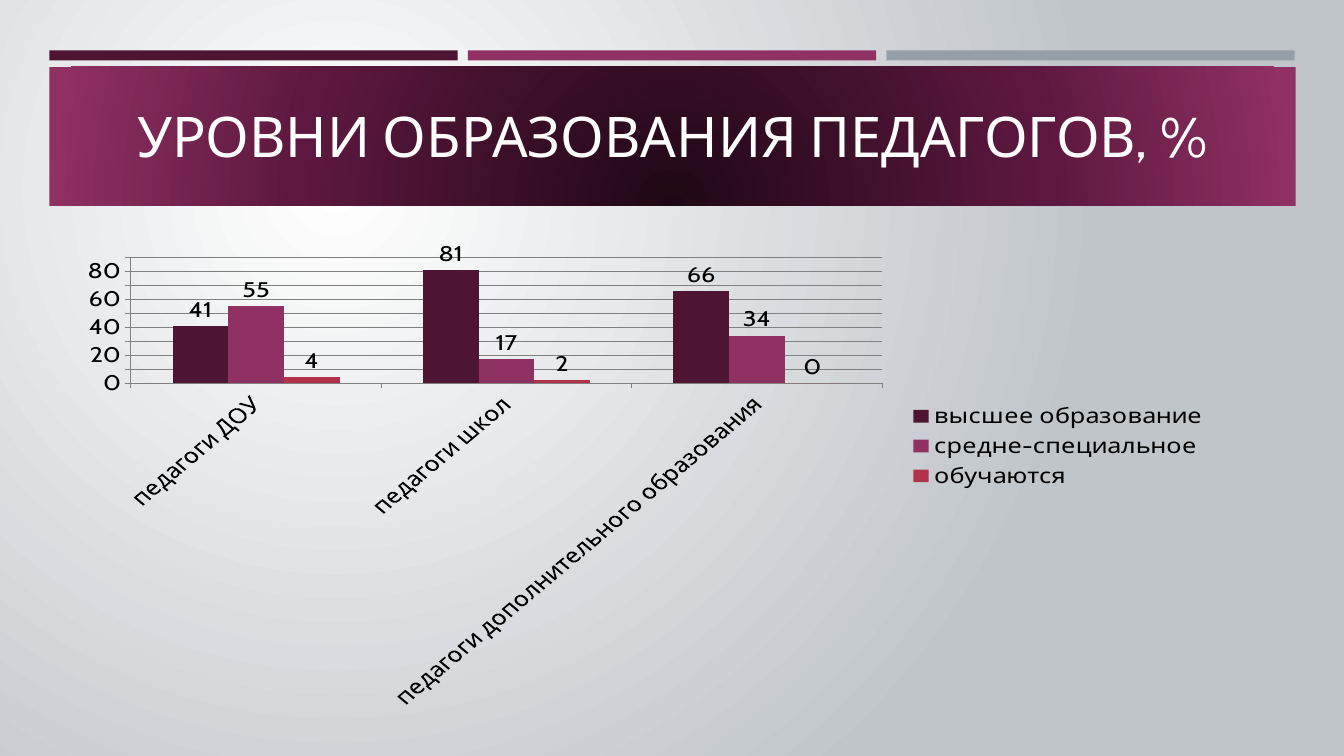
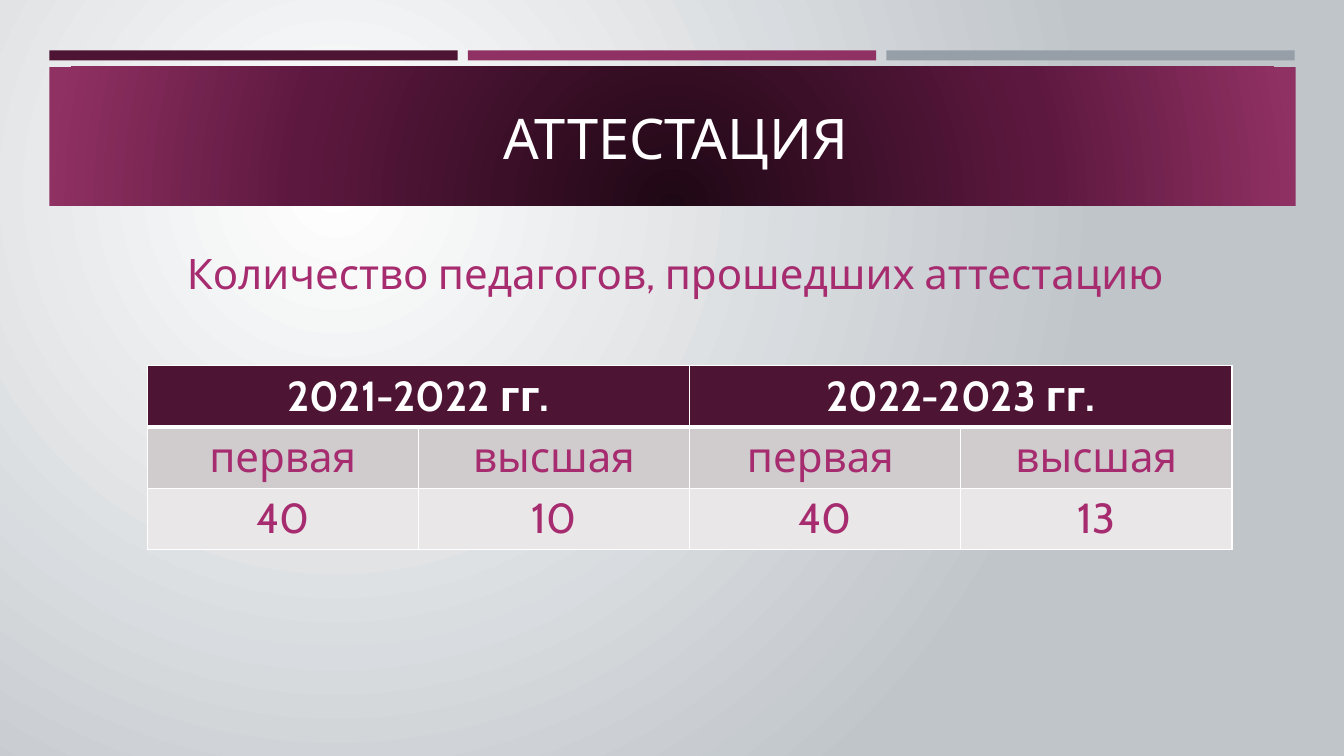
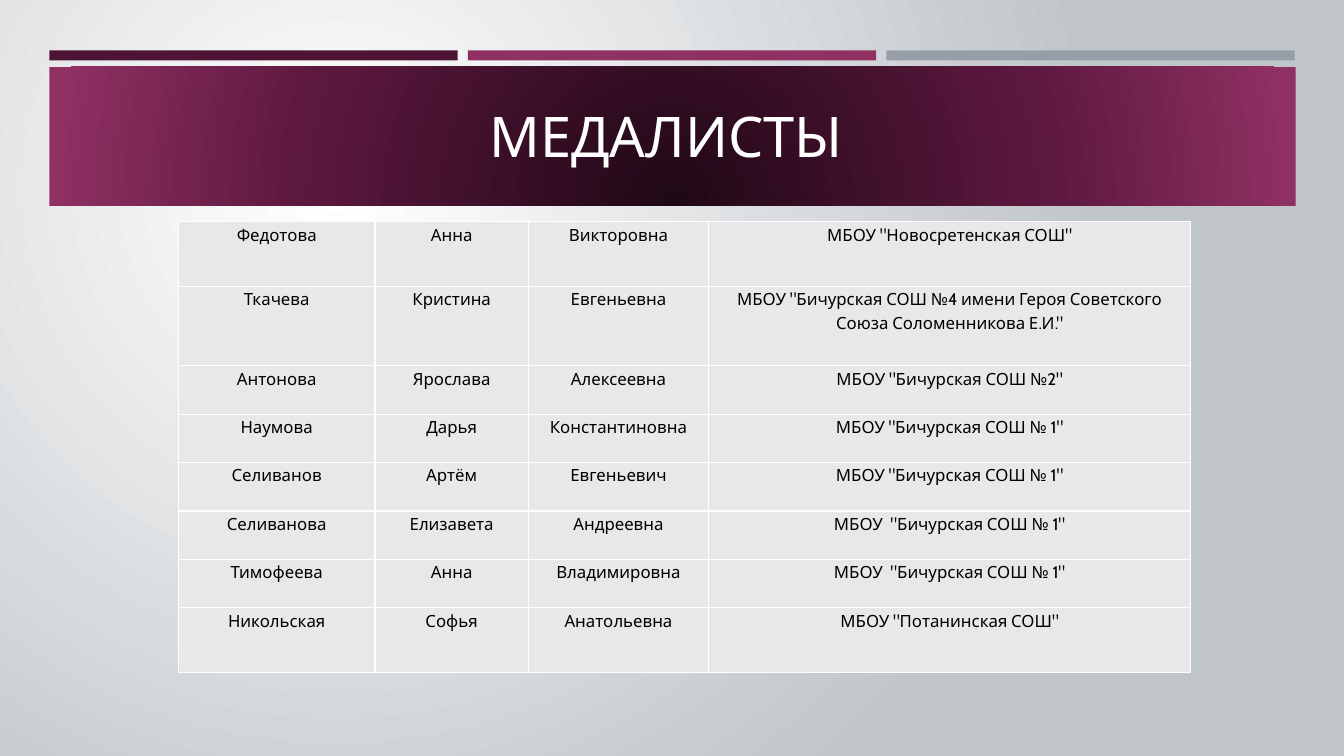
from dataclasses import dataclass

from lxml.etree import SubElement
from pptx import Presentation
from pptx.chart.data import CategoryChartData
from pptx.dml.color import RGBColor
from pptx.enum.chart import XL_CHART_TYPE, XL_LABEL_POSITION, XL_LEGEND_POSITION, XL_TICK_MARK
from pptx.enum.shapes import MSO_SHAPE
from pptx.enum.text import MSO_ANCHOR, PP_ALIGN
from pptx.oxml.ns import qn
from pptx.util import Inches, Pt

# Shared style
FONT = "Cabin"
WHITE = RGBColor(0xFF, 0xFF, 0xFF)
BLACK = RGBColor(0x00, 0x00, 0x00)
PLUM = RGBColor(0x4D, 0x14, 0x34)
BERRY = RGBColor(0x90, 0x31, 0x63)
RED = RGBColor(0xB2, 0x32, 0x4B)
STEEL = RGBColor(0x96, 0x9F, 0xA7)
MIST = RGBColor(0xC0, 0xC5, 0xCA)
MAGENTA = RGBColor(0xA6, 0x2C, 0x6F)
DARK_PLUM = RGBColor(0x1F, 0x08, 0x15)
MID_PLUM = RGBColor(0x5D, 0x18, 0x3F)
CELL_DARK = RGBColor(0xD0, 0xCC, 0xCE)
CELL_LIGHT = RGBColor(0xE9, 0xE7, 0xE8)
AXIS_GRAY = RGBColor(0x80, 0x80, 0x80)

TITLE_ONLY, TITLE_AND_BODY = 5, 1
MARGIN, BAR_WIDTH, BAR_STEP = 0.49, 4.05, 4.15


@dataclass(frozen=True)
class Area:
    left: float
    top: float
    width: float
    height: float

    def lengths(self) -> tuple:
        return tuple(Inches(n) for n in (self.left, self.top, self.width, self.height))


@dataclass(frozen=True)
class CellStyle:
    size: float
    color: RGBColor
    fill: RGBColor
    bold: bool = False
    top_line: float = 1
    bottom_line: float = 1


@dataclass(frozen=True)
class Series:
    name: str
    values: tuple[int, ...]
    color: RGBColor


HEADER = CellStyle(30, WHITE, PLUM, bold=True, bottom_line=3)
CATEGORY = CellStyle(30, MAGENTA, CELL_DARK, top_line=3)
COUNT = CellStyle(30, MAGENTA, CELL_LIGHT)
PERSON = CellStyle(12, BLACK, CELL_LIGHT)

# Slide content
GROUPS = ("педагоги ДОУ", "педагоги школ", "педагоги дополнительного образования")
EDUCATION = (
    Series("высшее образование", (41, 81, 66), PLUM),
    Series("средне-специальное", (55, 17, 34), BERRY),
    Series("обучаются", (4, 2, 0), RED),
)
ATTESTATION = (
    (HEADER, ("2021-2022 гг.", "", "2022-2023 гг.", "")),
    (CATEGORY, ("первая", "высшая", "первая ", "высшая")),
    (COUNT, ("40", "10", "40", "13")),
)
MEDALISTS = (
    ("Федотова", "Анна", "Викторовна", 'МБОУ "Новосретенская СОШ"'),
    ("Ткачева", "Кристина", "Евгеньевна",
     'МБОУ "Бичурская СОШ №4 имени Героя Советского Союза Соломенникова Е.И."'),
    ("Антонова", "Ярослава", "Алексеевна", 'МБОУ "Бичурская СОШ №2"'),
    ("Наумова", "Дарья", "Константиновна", 'МБОУ "Бичурская СОШ № 1"'),
    ("Селиванов", "Артём", "Евгеньевич", 'МБОУ "Бичурская СОШ № 1"'),
    ("Селиванова", "Елизавета", "Андреевна", 'МБОУ  "Бичурская СОШ № 1"'),
    ("Тимофеева", "Анна", "Владимировна", 'МБОУ  "Бичурская СОШ № 1"'),
    ("Никольская", "Софья", "Анатольевна", 'МБОУ "Потанинская СОШ"'),
)


def add_text(para, text: str, size: float, color: RGBColor, bold: bool = False) -> None:
    para.alignment = PP_ALIGN.CENTER
    span = para.add_run()
    span.text = text
    span.font.name = FONT
    span.font.size = Pt(size)
    span.font.bold = bold
    span.font.color.rgb = color


def set_radial_fill(fill, owner, stops: tuple, focus: tuple) -> None:
    """Give a fill a circular gradient; stops and focus are in percent."""
    fill.gradient()
    gradient = owner.find(".//" + qn("a:gradFill"))
    for child in list(gradient):
        gradient.remove(child)
    stop_list = SubElement(gradient, qn("a:gsLst"))
    for position, color in stops:
        stop = SubElement(stop_list, qn("a:gs"), pos=str(position * 1000))
        SubElement(stop, qn("a:srgbClr"), val=str(color))
    shade = SubElement(gradient, qn("a:path"))
    shade.set("path", "circle")
    focus_box = SubElement(shade, qn("a:fillToRect"))
    for side, percent in zip("ltrb", focus):
        focus_box.set(side, str(percent * 1000))


def add_rectangle(page, area: Area, color: RGBColor):
    box = page.shapes.add_shape(MSO_SHAPE.RECTANGLE, *area.lengths())
    box.shadow.inherit = False
    box.line.fill.background()
    box.fill.solid()
    box.fill.fore_color.rgb = color
    return box


def decorate_master(master, page) -> None:
    """Draw the background, bars and title band, then move them to the master."""
    set_radial_fill(master.background.fill, master.element,
                    ((0, WHITE), (100, MIST)), (50, 50, 100, 100))
    parts = [
        add_rectangle(page, Area(MARGIN + i * BAR_STEP, 0.5, BAR_WIDTH, 0.1), color)
        for i, color in enumerate((PLUM, BERRY, STEEL))
    ]
    band = add_rectangle(page, Area(MARGIN, 0.66, 12.36, 1.38), PLUM)
    set_radial_fill(band.fill, band.element,
                    ((0, DARK_PLUM), (60, MID_PLUM), (100, BERRY)), (50, 130, 50, -30))
    tree = master.element.cSld.spTree
    for i, part in enumerate([*parts, band]):
        part.element.nvSpPr.cNvPr.set("id", str(100 + i))
        tree.insert(2 + i, part.element)


def place(box, area: Area) -> None:
    box.left, box.top, box.width, box.height = area.lengths()
    box.text_frame.word_wrap = True


def add_page(deck, layout: int, title: str, left: float = 0.64, top: float = 0.8):
    page = deck.slides.add_slide(deck.slide_layouts[layout])
    box = page.shapes.title
    place(box, Area(left, top, 12.06, 1.08))
    box.text_frame.vertical_anchor = MSO_ANCHOR.MIDDLE
    add_text(box.text_frame.paragraphs[0], title, 40, WHITE)
    return page


def style_cell(cell, text: str, style: CellStyle) -> None:
    cell.fill.solid()
    cell.fill.fore_color.rgb = style.fill
    widths = {"L": 1, "R": 1, "T": style.top_line, "B": style.bottom_line}
    properties = cell._tc.get_or_add_tcPr()
    for i, (side, width) in enumerate(widths.items()):
        line = SubElement(properties, qn("a:ln" + side), w=str(Pt(width)))
        SubElement(SubElement(line, qn("a:solidFill")), qn("a:srgbClr"), val=str(WHITE))
        properties.insert(i, line)
    if text:
        add_text(cell.text_frame.paragraphs[0], text, style.size, style.color, style.bold)


def add_grid(page, left: float, top: float, widths: tuple, heights: tuple, rows: tuple):
    area = Area(left, top, sum(widths), sum(heights))
    table = page.shapes.add_table(len(heights), len(widths), *area.lengths()).table
    table.horz_banding = False
    for column, width in zip(table.columns, widths):
        column.width = Inches(width)
    for row, height, (style, texts) in zip(table.rows, heights, rows):
        row.height = Inches(height)
        for cell, text in zip(row.cells, texts):
            style_cell(cell, text, style)
    return table


def add_education_chart(page) -> None:
    data = CategoryChartData()
    data.categories = GROUPS
    for series in EDUCATION:
        data.add_series(series.name, series.values)
    area = Area(0.64, 2.39, 11.45, 4.65)
    chart = page.shapes.add_chart(XL_CHART_TYPE.COLUMN_CLUSTERED, *area.lengths(), data).chart
    chart.has_title = False
    chart.font.name = FONT
    chart.font.size = Pt(18)
    chart.font.color.rgb = BLACK
    chart.has_legend = True
    chart.legend.position = XL_LEGEND_POSITION.RIGHT
    chart.legend.include_in_layout = False

    # Axes and grid
    for axis in (chart.category_axis, chart.value_axis):
        axis.major_tick_mark = XL_TICK_MARK.OUTSIDE
        axis.format.line.color.rgb = AXIS_GRAY
    chart.value_axis.has_major_gridlines = True
    chart.value_axis.major_gridlines.format.line.color.rgb = AXIS_GRAY

    # Columns and their labels
    plot = chart.plots[0]
    plot.gap_width = 150
    plot.vary_by_categories = False
    for column, series in zip(plot.series, EDUCATION):
        column.format.fill.solid()
        column.format.fill.fore_color.rgb = series.color
        column.data_labels.show_value = True
        column.data_labels.position = XL_LABEL_POSITION.OUTSIDE_END


def fill_attestation(page) -> None:
    body = page.placeholders[1]
    place(body, Area(0.67, 2.41, 12.06, 4.02))
    para = body.text_frame.paragraphs[0]
    add_text(para, "Количество педагогов, прошедших аттестацию", 30, MAGENTA)
    properties = para._p.get_or_add_pPr()
    properties.set("marL", "0")
    properties.set("indent", "0")
    SubElement(properties, qn("a:buNone"))

    table = add_grid(page, 1.46, 3.63, (2.69,) * 4, (0.6,) * 3, ATTESTATION)
    for first in (0, 2):
        table.cell(0, first).merge(table.cell(0, first + 1))


def add_medalists(page) -> None:
    heights = (0.64, 0.79, *(0.48,) * 5, 0.64)
    rows = tuple((PERSON, person) for person in MEDALISTS)
    table = add_grid(page, 1.77, 2.2, (1.95, 1.52, 1.79, 4.78), heights, rows)
    table.first_row = False
    for row in table.rows:
        for cell in row.cells:
            cell.margin_left = cell.margin_right = Inches(0.01)
            cell.margin_top = cell.margin_bottom = 0
            cell.text_frame.paragraphs[0].line_spacing = 1.15
        row.cells[3].text_frame.paragraphs[0].space_after = Pt(10)


def main() -> None:
    deck = Presentation()
    deck.slide_width, deck.slide_height = Inches(13.33), Inches(7.5)

    education = add_page(deck, TITLE_ONLY, "УРОВНИ ОБРАЗОВАНИЯ ПЕДАГОГОВ, %")
    decorate_master(deck.slide_master, education)
    add_education_chart(education)

    fill_attestation(add_page(deck, TITLE_AND_BODY, "АТТЕСТАЦИЯ", 0.67, 0.82))
    add_medalists(add_page(deck, TITLE_ONLY, "МЕДАЛИСТЫ "))

    deck.save("out.pptx")


if __name__ == "__main__":
    main()
